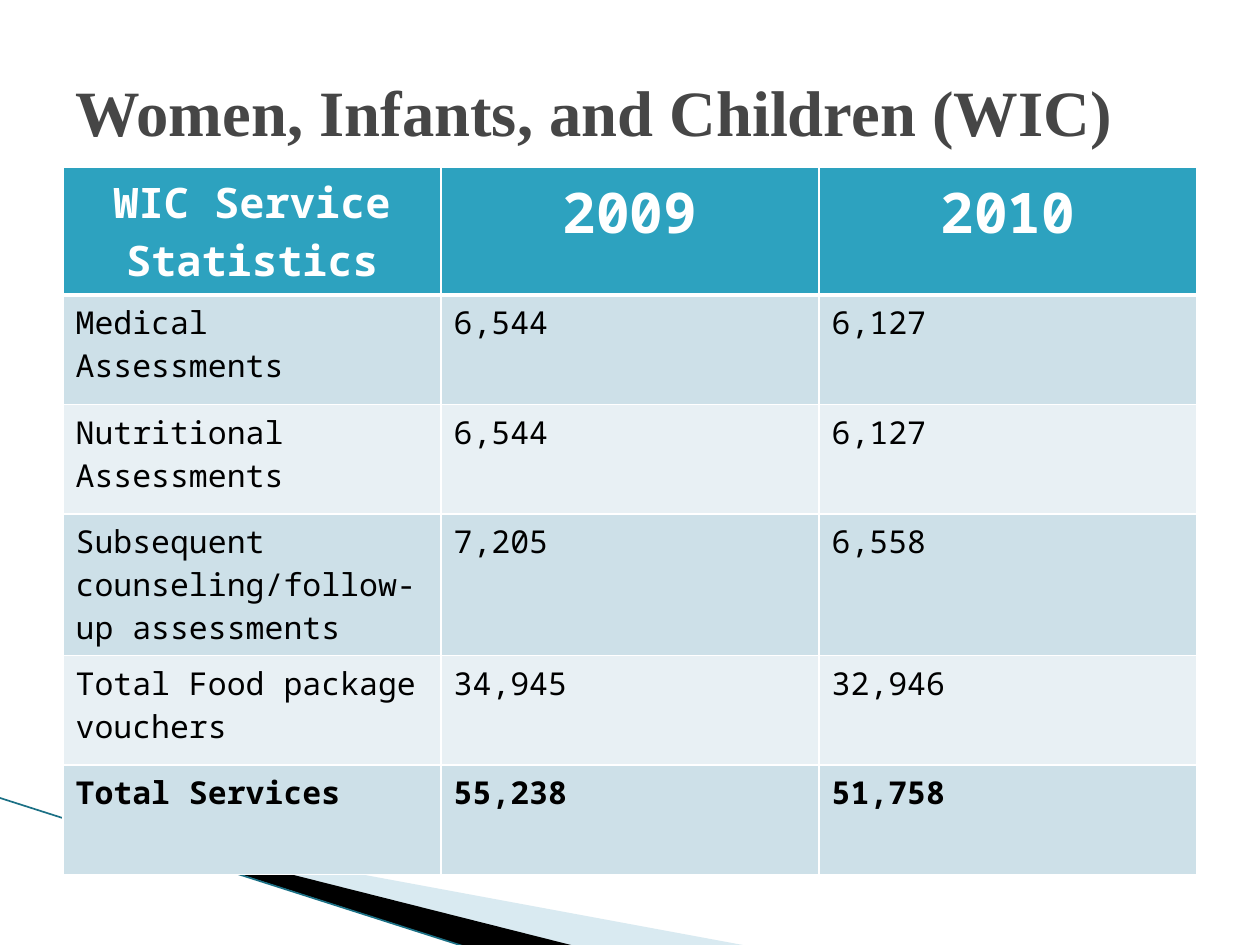
from dataclasses import dataclass

from lxml import etree
from pptx import Presentation
from pptx.dml.color import RGBColor
from pptx.enum.text import MSO_ANCHOR, PP_ALIGN
from pptx.oxml.ns import qn
from pptx.util import Inches, Pt

CENTER, LEFT = PP_ALIGN.CENTER, PP_ALIGN.LEFT
MIDDLE = MSO_ANCHOR.MIDDLE
SLIDE_W, SLIDE_H = 10, 7.5
MARGIN = SLIDE_W * 0.05
TABLE_TOP, COLUMN_W, ROW_H = 1.33, 3, 0.87
TITLE_FONT, TABLE_FONT = "Times New Roman", "Noto Sans Mono"
WHITE, BLACK = "FFFFFF", "000000"
HEADER_FILL = "2DA2BF"
BAND_FILLS = ("CDE0E8", "E8F0F4")

STATISTICS = [
    ("WIC Service Statistics", "2009", "2010"),
    ("Medical Assessments", "6,544", "6,127"),
    ("Nutritional Assessments", "6,544", "6,127"),
    ("Subsequent counseling/follow-up assessments", "7,205", "6,558"),
    ("Total Food package vouchers", "34,945", "32,946"),
    ("Total Services", "55,238", "51,758"),
]


@dataclass
class Swoosh:
    points: list[tuple[float, float]]
    color: str
    opacity: int = 100


@dataclass
class CellStyle:
    size: float
    color: str
    bold: bool
    fill: str
    align: PP_ALIGN
    top_border: float = 1
    bottom_border: float = 1


SWOOSHES = [
    Swoosh([(0.55, 6.51), (5.95, 7.51), (4.56, 7.51), (0.55, 6.5)], "A0CBDC", 40),
    Swoosh([(0.53, 6.49), (4.57, 7.51), (3.72, 7.52), (0.54, 6.5)], BLACK),
]


def rgb(color: str) -> RGBColor:
    return RGBColor.from_string(color)


def draw_swoosh(slide, swoosh: Swoosh) -> None:
    start, *rest = [(Inches(x), Inches(y)) for x, y in swoosh.points]
    builder = slide.shapes.build_freeform(*start)
    builder.add_line_segments(rest, close=True)
    band = builder.convert_to_shape()
    band.shadow.inherit = False
    band.line.fill.background()
    band.fill.solid()
    band.fill.fore_color.rgb = rgb(swoosh.color)
    if swoosh.opacity < 100:
        color = band.fill._xPr.find(qn("a:solidFill"))[0]
        etree.SubElement(color, qn("a:alpha"), val=str(swoosh.opacity * 1000))


def draw_edge_line(slide) -> None:
    ends = [Inches(v) for v in (-0.01, 6.33, 3.71, 7.52)]
    edge = slide.shapes.add_connector(1, *ends)
    edge.line.color.rgb = rgb("1B7085")
    edge.line.width = Pt(0.95)
    etree.SubElement(edge._element.spPr, qn("a:effectLst"))


def format_text(paragraph, font_name: str, size: float, color: str, bold: bool) -> None:
    for run in paragraph.runs:
        run.font.name = font_name
        run.font.size = Pt(size)
        run.font.bold = bold
        run.font.color.rgb = rgb(color)


def add_title(slide, wording: str) -> None:
    title = slide.shapes.title
    title.left, title.top = Inches(MARGIN), Inches(0.25)
    title.width, title.height = Inches(SLIDE_W - 2 * MARGIN), Inches(1.25)
    title.text_frame.text = wording
    title.text_frame.vertical_anchor = MIDDLE
    heading = title.text_frame.paragraphs[0]
    heading.alignment = LEFT
    format_text(heading, TITLE_FONT, 36.9, "464646", True)


def set_borders(cell, style: CellStyle) -> None:
    widths = {"L": 1, "R": 1, "T": style.top_border, "B": style.bottom_border}
    properties = cell._tc.get_or_add_tcPr()
    for side, width in widths.items():
        border = etree.SubElement(properties, qn(f"a:ln{side}"), w=str(Pt(width)))
        fill = etree.SubElement(border, qn("a:solidFill"))
        etree.SubElement(fill, qn("a:srgbClr"), val=WHITE)


def fill_cell(cell, wording: str, style: CellStyle) -> None:
    set_borders(cell, style)
    cell.fill.solid()
    cell.fill.fore_color.rgb = rgb(style.fill)
    cell.text_frame.text = wording
    paragraph = cell.text_frame.paragraphs[0]
    paragraph.alignment = style.align
    format_text(paragraph, TABLE_FONT, style.size, style.color, style.bold)


def cell_style(row: int, column: int) -> CellStyle:
    if row == 0:
        size = 24 if column == 0 else 32
        return CellStyle(size, WHITE, True, HEADER_FILL, CENTER, bottom_border=3)
    is_total = row == len(STATISTICS) - 1
    band = BAND_FILLS[(row - 1) % 2]
    return CellStyle(18, BLACK, is_total, band, LEFT, top_border=3 if row == 1 else 1)


def add_statistics(slide) -> None:
    rows, columns = len(STATISTICS), len(STATISTICS[0])
    table = slide.shapes.add_table(
        rows, columns, Inches(MARGIN), Inches(TABLE_TOP),
        Inches(columns * COLUMN_W), Inches(rows * ROW_H),
    ).table
    for row, record in enumerate(STATISTICS):
        for column, wording in enumerate(record):
            fill_cell(table.cell(row, column), wording, cell_style(row, column))


def main() -> None:
    deck = Presentation()
    deck.slide_width, deck.slide_height = Inches(SLIDE_W), Inches(SLIDE_H)
    slide = deck.slides.add_slide(deck.slide_layouts[5])
    for swoosh in SWOOSHES:
        draw_swoosh(slide, swoosh)
    draw_edge_line(slide)
    add_title(slide, "Women, Infants, and Children (WIC)")
    add_statistics(slide)
    deck.save("out.pptx")


if __name__ == "__main__":
    main()
